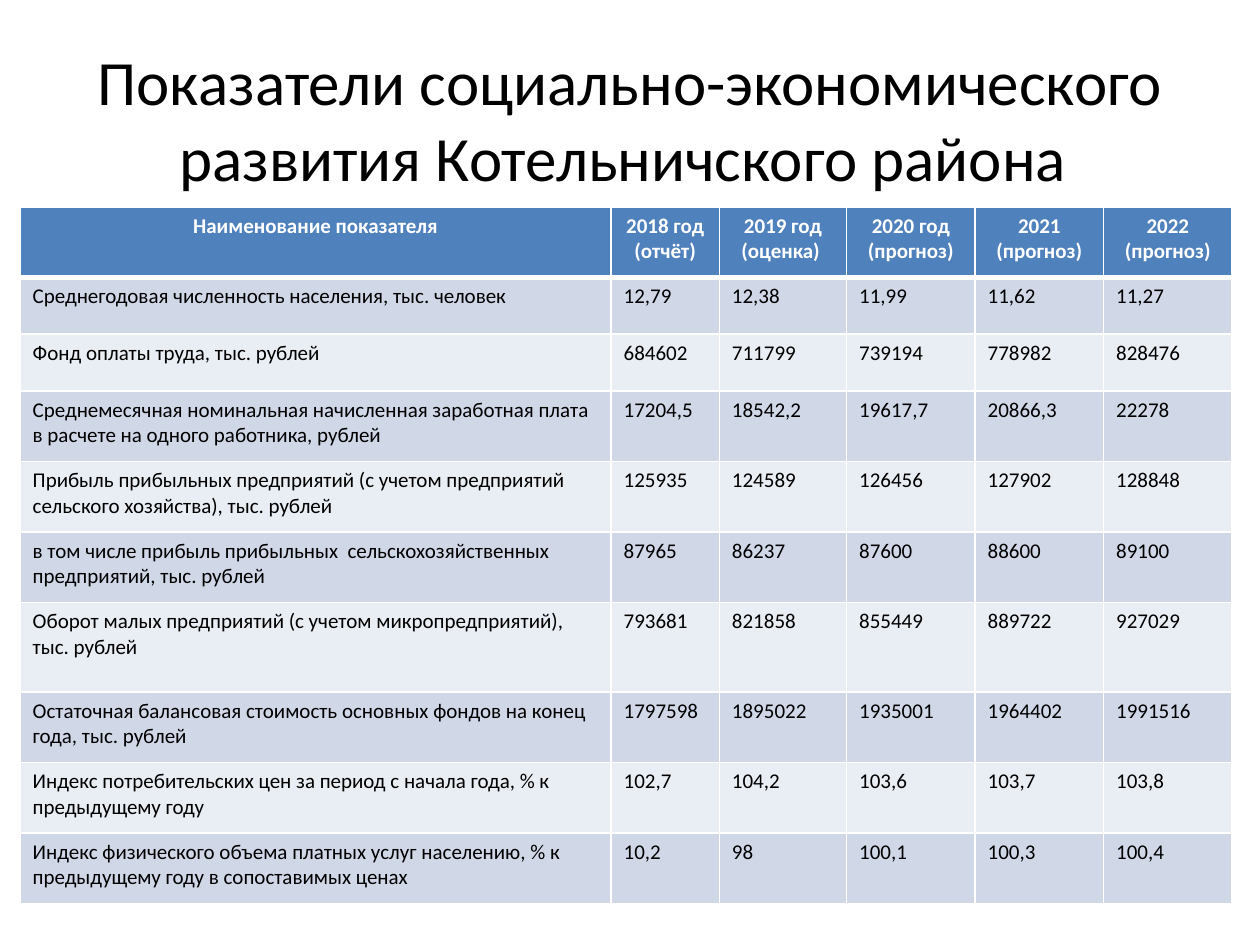
from lxml import etree
from pptx import Presentation
from pptx.dml.color import RGBColor
from pptx.enum.text import MSO_ANCHOR, PP_ALIGN
from pptx.oxml.ns import qn
from pptx.util import Inches, Pt

MIDDLE = MSO_ANCHOR.MIDDLE
LEFT, CENTER = PP_ALIGN.LEFT, PP_ALIGN.CENTER

WIDTH, HEIGHT = Inches(10), Inches(7.5)
COLORS = {"white": "FFFFFF", "black": "000000", "head": "4F81BD",
          "odd": "D0D8E8", "even": "E9EDF4"}
FORMATS = {
    "title": {"size": Pt(36), "bold": False, "color": "black", "align": CENTER},
    "head": {"size": Pt(12), "bold": True, "color": "white", "align": CENTER},
    "body": {"size": Pt(12), "bold": False, "color": "black", "align": LEFT},
}

TITLE = "Показатели социально-экономического развития Котельничского района "
COLS = [4.69, 0.86, 1.01, 1.02, 1.02, 1.02]
ROWS = [0.56, 0.45, 0.45, 0.56, 0.56, 0.56, 0.71, 0.56, 0.56, 0.56]
DATA = [
    ["Наименование показателя", "2018 год (отчёт)", "2019 год (оценка) ",
     "2020 год (прогноз)", "2021\n(прогноз)", "2022\n(прогноз)"],
    ["Среднегодовая численность населения, тыс. человек",
     "12,79", "12,38", "11,99", "11,62", "11,27"],
    ["Фонд оплаты труда, тыс. рублей",
     "684602", "711799", "739194", "778982", "828476"],
    ["Среднемесячная номинальная начисленная заработная плата "
     "в расчете на одного работника, рублей",
     "17204,5", "18542,2", "19617,7", "20866,3", "22278"],
    ["Прибыль прибыльных предприятий (с учетом предприятий "
     "сельского хозяйства), тыс. рублей",
     "125935", "124589", "126456", "127902", "128848"],
    ["в том числе прибыль прибыльных  сельскохозяйственных "
     "предприятий, тыс. рублей",
     "87965", "86237", "87600", "88600", "89100"],
    ["Оборот малых предприятий (с учетом микропредприятий), тыс. рублей",
     "793681", "821858", "855449", "889722", "927029"],
    ["Остаточная балансовая стоимость основных фондов на конец "
     "года, тыс. рублей",
     "1797598", "1895022", "1935001", "1964402", "1991516"],
    ["Индекс потребительских цен за период с начала года, % к "
     "предыдущему году",
     "102,7", "104,2", "103,6", "103,7", "103,8"],
    ["Индекс физического объема платных услуг населению, % к "
     "предыдущему году в сопоставимых ценах",
     "10,2", "98", "100,1", "100,3", "100,4"],
]


class Deck:
    def __init__(self, font):
        self.font = font
        self.prs = Presentation()
        self.prs.slide_width, self.prs.slide_height = WIDTH, HEIGHT
        self.slide = self.prs.slides.add_slide(self.prs.slide_layouts[6])

    def label(self, frame, text, style):
        form = FORMATS[style]
        frame.text = text
        frame.word_wrap = True
        for par in frame.paragraphs:
            par.alignment = form["align"]
            for run in par.runs:
                for key, value in {"name": self.font, "size": form["size"],
                                   "bold": form["bold"]}.items():
                    setattr(run.font, key, value)
                run.font.color.rgb = RGBColor.from_string(COLORS[form["color"]])

    def title(self, text, x, y, w, h):
        """Place a title; lengths are shares of the slide's size."""
        box = self.slide.shapes.add_textbox(
            int(x * WIDTH), int(y * HEIGHT), int(w * WIDTH), int(h * HEIGHT))
        box.text_frame.vertical_anchor = MIDDLE
        self.label(box.text_frame, text, "title")

    def border(self, cell, widths):
        """Draw white cell edges; widths maps an edge letter to points."""
        props = cell._tc.get_or_add_tcPr()
        for edge, width in widths.items():
            line = etree.SubElement(props, qn(f"a:ln{edge}"), w=str(Pt(width)))
            fill = etree.SubElement(line, qn("a:solidFill"))
            etree.SubElement(fill, qn("a:srgbClr"), val=COLORS["white"])

    def table(self, data, cols, rows, x, y):
        """Place a banded table; x and y are shares, cols and rows inches."""
        grid = self.slide.shapes.add_table(
            len(rows), len(cols), int(x * WIDTH), int(y * HEIGHT),
            Inches(sum(cols)), Inches(sum(rows))).table
        for col, width in zip(grid.columns, cols):
            col.width = Inches(width)
        for i, (row, height) in enumerate(zip(grid.rows, rows)):
            row.height = Inches(height)
            style = "body" if i else "head"
            band = ("odd" if i % 2 else "even") if i else "head"
            edges = {"L": 1, "R": 1, "T": 3 if i == 1 else 1,
                     "B": 1 if i else 3}
            for cell, text in zip(row.cells, data[i]):
                self.label(cell.text_frame, text, style)
                self.border(cell, edges)
                cell.fill.solid()
                cell.fill.fore_color.rgb = RGBColor.from_string(COLORS[band])


def main():
    deck = Deck("Calibri")
    deck.title(TITLE, 0.05, 0.04, 0.9, 0.17)
    deck.table(DATA, COLS, ROWS, 0.016, 0.219)
    deck.prs.save("out.pptx")


if __name__ == "__main__":
    main()
